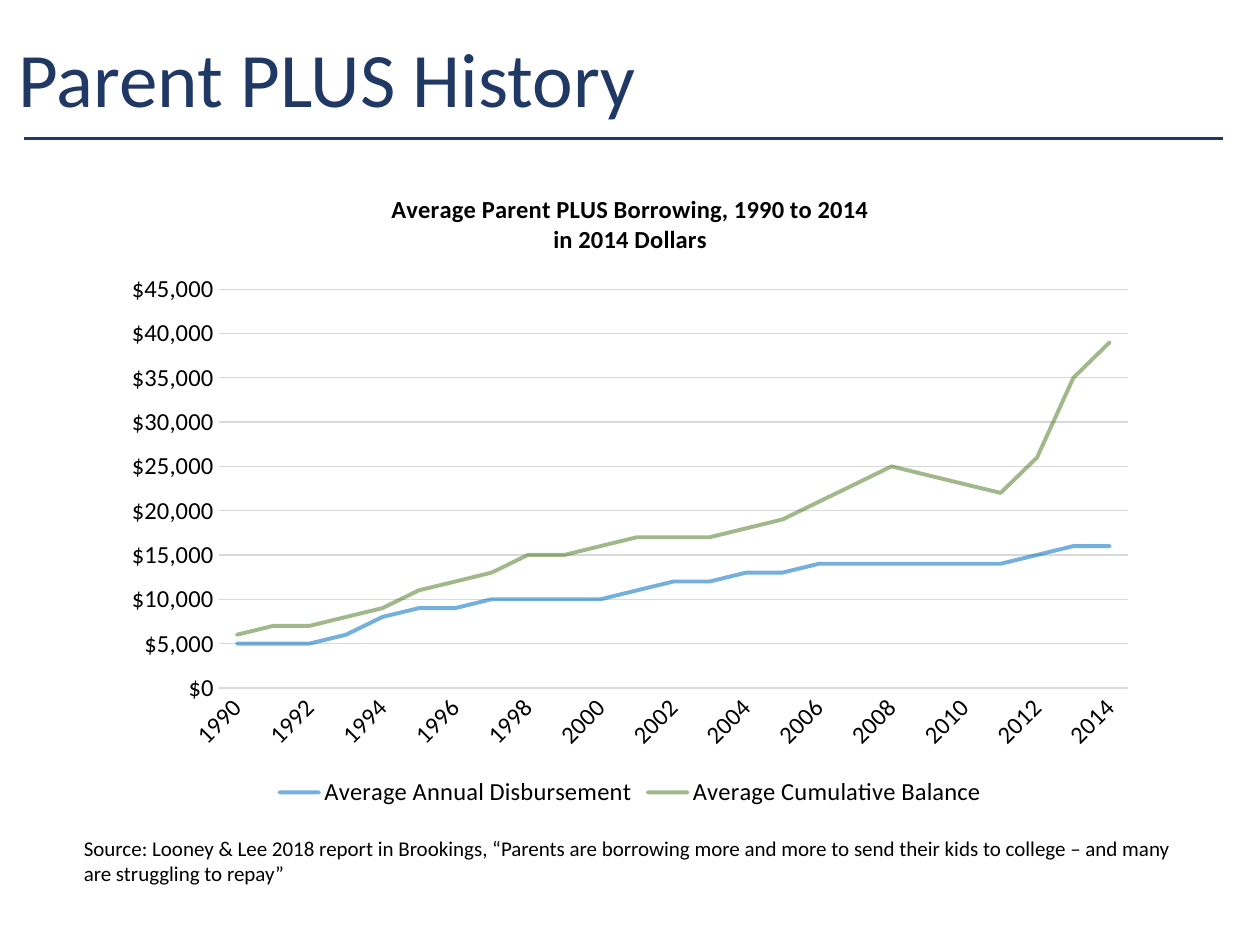
"""Build the Parent PLUS borrowing slide."""
import lxml.etree
import pptx
import pptx.chart.data
import pptx.dml.color
import pptx.enum.chart
import pptx.enum.shapes
import pptx.enum.text
import pptx.oxml
import pptx.oxml.ns
import pptx.util

Cm = pptx.util.Cm
Pt = pptx.util.Pt
qn = pptx.oxml.ns.qn
NAVY = pptx.dml.color.RGBColor(0x20, 0x38, 0x64)
BLACK = pptx.dml.color.RGBColor(0, 0, 0)
GRAY = pptx.dml.color.RGBColor(0xD9, 0xD9, 0xD9)
BLUE = pptx.dml.color.RGBColor(0, 0x70, 0xC0)
GREEN = pptx.dml.color.RGBColor(0x33, 0x66, 0)

YEARS = [str(year) for year in range(1990, 2015)]
SERIES = [
    ("Average Annual Disbursement", BLUE, 55,
     [5000, 5000, 5000, 6000, 8000, 9000, 9000, 10000, 10000, 10000, 10000, 11000, 12000,
      12000, 13000, 13000, 14000, 14000, 14000, 14000, 14000, 14000, 15000, 16000, 16000]),
    ("Average Cumulative Balance", GREEN, 45,
     [6000, 7000, 7000, 8000, 9000, 11000, 12000, 13000, 15000, 15000, 16000, 17000, 17000,
      17000, 18000, 19000, 21000, 23000, 25000, 24000, 23000, 22000, 26000, 35000, 39000]),
]
TITLE = "Average Parent PLUS Borrowing, 1990 to 2014\nin 2014 Dollars"
SOURCE = ("Source: Looney & Lee 2018 report in Brookings, “Parents are borrowing more and more "
          "to send their kids to college – and many are struggling to repay”")


class Deck:
    def __init__(self, slide, face="Calibri"):
        self.slide = slide
        self.face = face

    def style(self, font, size, color=BLACK, bold=False):
        font.name = self.face
        font.size = Pt(size)
        font.bold = bold
        font.color.rgb = color

    def rule(self, left, right, top, color, width):
        line = self.slide.shapes.add_connector(
            pptx.enum.shapes.MSO_CONNECTOR.STRAIGHT, Cm(left), Cm(top), Cm(right), Cm(top))
        line.line.color.rgb = color
        line.line.width = Pt(width)
        lxml.etree.SubElement(line.element.spPr, qn("a:effectLst"))

    def text(self, box, words, size, color=BLACK, space=1.0, middle=False):
        frame = self.slide.shapes.add_textbox(*map(Cm, box)).text_frame
        frame.word_wrap = True
        if middle:
            frame.vertical_anchor = pptx.enum.text.MSO_ANCHOR.MIDDLE
        frame.text = words
        para = frame.paragraphs[0]
        para.line_spacing = space
        self.style(para.runs[0].font, size, color)

    def chart(self, box, plot, title, names, series):
        data = pptx.chart.data.CategoryChartData(number_format='"$"#,##0')
        data.categories = names
        for name, _, _, values in series:
            data.add_series(name, values)
        chart = self.slide.shapes.add_chart(
            pptx.enum.chart.XL_CHART_TYPE.LINE, *map(Cm, box), data).chart
        self.style(chart.font, 10)
        frame = chart.chart_title.text_frame
        frame.text = title
        for para in frame.paragraphs:
            for run in para.runs:
                self.style(run.font, 14, bold=True)
        chart.chart_title.include_in_layout = False
        chart.has_legend = True
        chart.legend.position = pptx.enum.chart.XL_LEGEND_POSITION.BOTTOM
        chart.legend.include_in_layout = False
        self.style(chart.legend.font, 14)
        self.axes(chart)
        self.lines(chart, series)
        self.place(chart, box, plot)

    def axes(self, chart):
        years, money = chart.category_axis, chart.value_axis
        for axis in (years, money):
            axis.major_tick_mark = pptx.enum.chart.XL_TICK_MARK.NONE
            axis.minor_tick_mark = pptx.enum.chart.XL_TICK_MARK.NONE
            self.style(axis.tick_labels.font, 14)
        years.format.line.color.rgb = GRAY
        years.format.line.width = Pt(0.75)
        money.format.line.fill.background()
        money.minimum_scale, money.maximum_scale, money.major_unit = 0, 45000, 5000
        money.tick_labels.number_format = '"$"#,##0'
        money.tick_labels.number_format_is_linked = False
        money.major_gridlines.format.line.color.rgb = GRAY
        money.major_gridlines.format.line.width = Pt(0.75)
        turn = chart.element.xpath(".//c:catAx/c:txPr/a:bodyPr")[0]
        turn.set("rot", "-2700000")
        turn.set("vert", "horz")
        last = chart.element.xpath(".//c:catAx/c:noMultiLvlLbl")[0]
        last.addprevious(last.makeelement(qn("c:tickLblSkip"), {"val": "2"}))

    def lines(self, chart, series):
        for item, (_, color, alpha, _) in zip(chart.plots[0].series, series):
            item.smooth = False
            item.marker.style = pptx.enum.chart.XL_MARKER_STYLE.NONE
            item.format.line.color.rgb = color
            item.format.line.width = Pt(2.25)
            line = chart.element.xpath(f".//c:ser[c:idx/@val='{item.index}']/c:spPr/a:ln")[0]
            line.set("cap", "rnd")
            tone = line.xpath(".//a:srgbClr")[0]
            lxml.etree.SubElement(tone, qn("a:alpha"), val=str(alpha * 1000))

    def place(self, chart, box, plot):
        area = chart.element.xpath(".//c:plotArea")[0]
        for old in area.xpath("c:layout"):
            area.remove(old)
        left, top, width, height = box
        rules = {
            "layoutTarget": "inner", "xMode": "edge", "yMode": "edge",
            "x": (plot[0] - left) / width, "y": (plot[1] - top) / height,
            "w": plot[2] / width, "h": plot[3] / height,
        }
        parts = "".join(f'<c:{key} val="{val}"/>' for key, val in rules.items())
        area.insert(0, pptx.oxml.parse_xml(
            f'<c:layout {pptx.oxml.ns.nsdecls("c")}><c:manualLayout>{parts}'
            "</c:manualLayout></c:layout>"))


def main():
    show = pptx.Presentation()
    show.slide_width, show.slide_height = Cm(25.4), Cm(19.05)
    deck = Deck(show.slides.add_slide(show.slide_layouts[6]))
    deck.rule(24.66, 0.48, 2.79, NAVY, 1.75)
    deck.text((0.12, 0.56, 21.9, 2.2), "Parent PLUS History", 44, NAVY, 0.9, True)
    deck.chart((2.24, 3.4, 20.93, 12.98), (4.41, 5.83, 18.33, 8.04), TITLE, YEARS, SERIES)
    deck.text((1.44, 16.71, 22.53, 1.27), SOURCE, 12)
    show.save("out.pptx")


if __name__ == "__main__":
    main()
